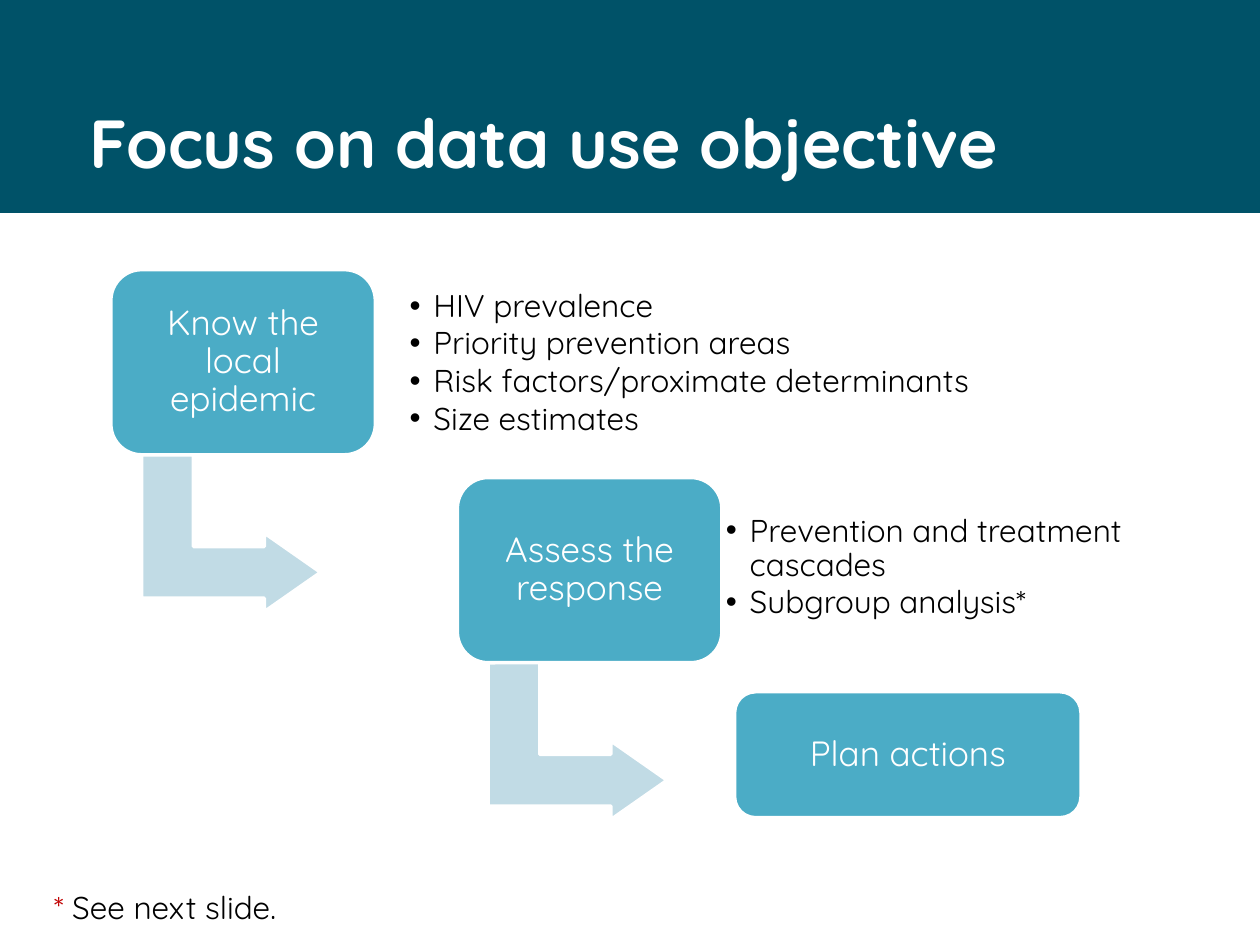
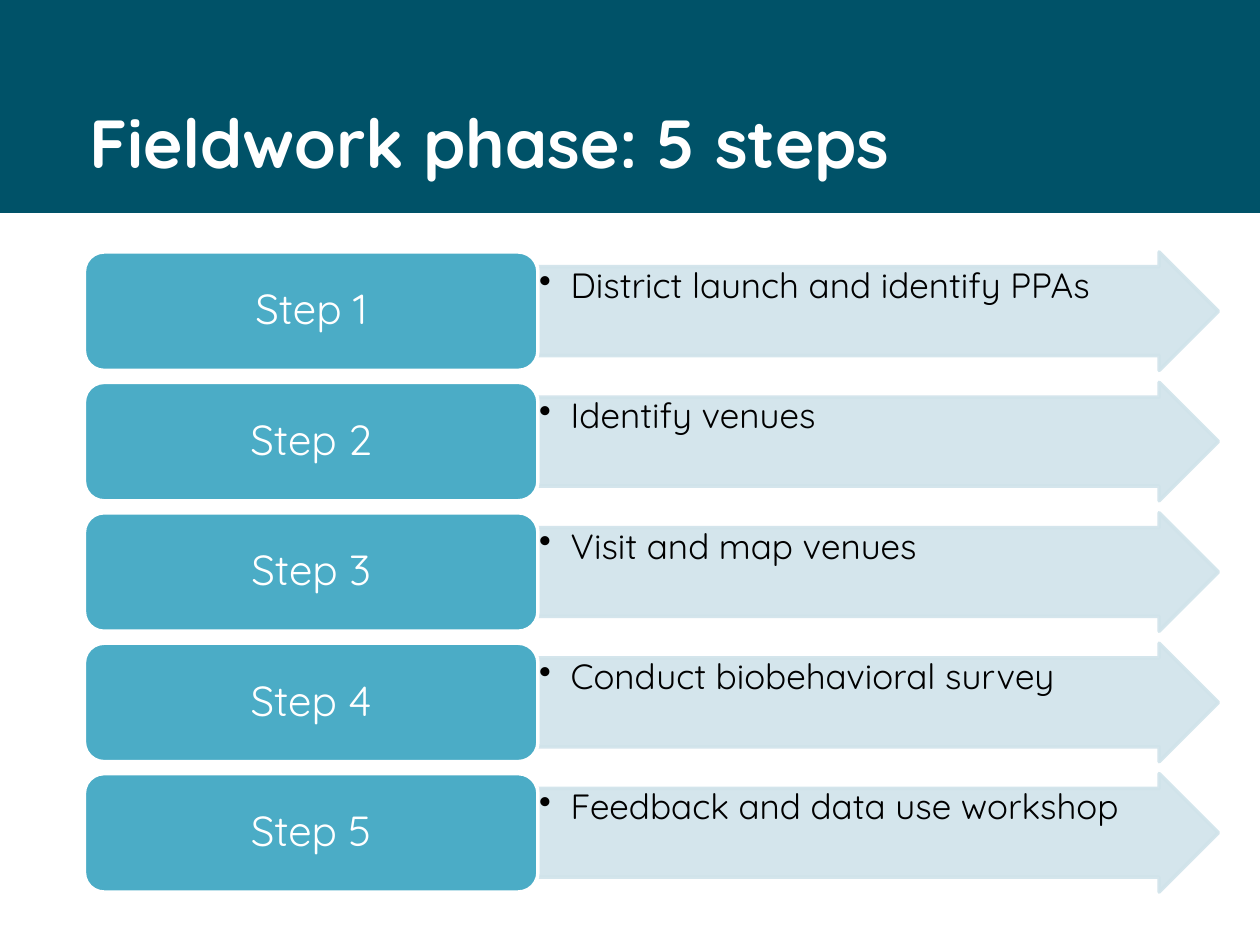
from dataclasses import dataclass

from lxml import etree
from pptx import Presentation
from pptx.dml.color import RGBColor
from pptx.enum.shapes import MSO_SHAPE
from pptx.enum.text import MSO_ANCHOR, MSO_AUTO_SIZE, PP_ALIGN
from pptx.oxml.ns import qn
from pptx.util import Inches, Pt

RECTANGLE = MSO_SHAPE.RECTANGLE
ROUNDED = MSO_SHAPE.ROUNDED_RECTANGLE
BENT_ARROW = MSO_SHAPE.BENT_UP_ARROW
RIGHT_ARROW = MSO_SHAPE.RIGHT_ARROW
TOP, MIDDLE = MSO_ANCHOR.TOP, MSO_ANCHOR.MIDDLE
LEFT, CENTER = PP_ALIGN.LEFT, PP_ALIGN.CENTER
NO_AUTOFIT = MSO_AUTO_SIZE.NONE
TITLE_ONLY, TWO_CONTENT = 5, 3


@dataclass(frozen=True)
class Theme:
    font: str = "Quicksand"
    band: str = "005268"
    box: str = "4BACC6"
    bent_arrow: str = "C1DBE5"
    step_arrow: str = "D0E3EA"
    light: str = "FFFFFF"
    dark: str = "000000"
    accent: str = "C00000"
    title_size: float = 38.8
    step_size: int = 24
    large_size: int = 20
    list_size: int = 18
    outline: int = 2


THEME = Theme()


def place(shape, box):
    shape.left, shape.top, shape.width, shape.height = map(Inches, box)


def format_runs(paragraph, size, color, bold=False):
    for run in paragraph.runs:
        run.font.name = THEME.font
        run.font.size = Pt(size)
        run.font.bold = bold
        run.font.color.rgb = RGBColor.from_string(color)


def set_frame(frame, inset, anchor):
    frame.word_wrap = True
    frame.auto_size = NO_AUTOFIT
    frame.vertical_anchor = anchor
    frame.margin_left = frame.margin_right = Inches(inset)
    frame.margin_top = frame.margin_bottom = Inches(inset)


def add_filled(slide, kind, box, fill, line=None):
    shape = slide.shapes.add_shape(kind, *map(Inches, box))
    shape.shadow.inherit = False
    shape.fill.solid()
    shape.fill.fore_color.rgb = RGBColor.from_string(fill)
    if line:
        shape.line.color.rgb = RGBColor.from_string(line)
        shape.line.width = Pt(THEME.outline)
    else:
        shape.line.fill.background()
    return shape


def add_label_box(slide, box, label, size):
    """Rounded box with a centred label."""
    shape = add_filled(slide, ROUNDED, box, THEME.box, THEME.light)
    frame = shape.text_frame
    set_frame(frame, 0.08, MIDDLE)
    frame.text = label
    paragraph = frame.paragraphs[0]
    paragraph.alignment = CENTER
    paragraph.line_spacing = 0.9
    format_runs(paragraph, size, THEME.light)


def fill_bullets(frame, items, size, indent):
    frame.text = "\n".join(items)
    for paragraph in frame.paragraphs:
        properties = paragraph._p.get_or_add_pPr()
        properties.set("marL", str(Inches(indent)))
        properties.set("indent", str(-Inches(indent)))
        etree.SubElement(properties, qn("a:buChar")).set("char", "•")
        paragraph.alignment = LEFT
        paragraph.line_spacing = 0.9
        paragraph.space_before = Pt(0)
        paragraph.space_after = Pt(2)
        format_runs(paragraph, size, THEME.dark)


def make_translucent(shape, percent):
    for color in shape._element.spPr.iter(qn("a:srgbClr")):
        etree.SubElement(color, qn("a:alpha")).set("val", str(percent * 1000))


def set_up_master(prs, slide):
    """Put the title band and the title's place on the master."""
    master = prs.slide_master
    band = add_filled(slide, RECTANGLE, (0, 0, 10, 1.69), THEME.band)
    master.shapes._spTree.insert(2, band._element)
    title = master.placeholders[0]
    place(title, (0.61, 0.75, 8.62, 1.1))
    set_frame(title.text_frame, 0.1, TOP)
    title.text_frame.margin_top = title.text_frame.margin_bottom = Inches(0.05)


def add_titled_slide(prs, layout, title):
    slide = prs.slides.add_slide(prs.slide_layouts[layout])
    frame = slide.shapes.title.text_frame
    frame.auto_size = NO_AUTOFIT
    frame.vertical_anchor = TOP
    frame.text = title
    frame.paragraphs[0].alignment = LEFT
    format_runs(frame.paragraphs[0], THEME.title_size, THEME.light, bold=True)
    return slide


def add_objective(slide, box, label, placeholder, list_box, items):
    """Objective box, the bent arrow below it and its list at the right."""
    left, top, _, _ = box
    arrow = add_filled(slide, BENT_ARROW, (left + 0.33, top + 1.38, 1.25, 1.42),
                       THEME.bent_arrow, THEME.light)
    arrow.rotation = 90
    for index, value in enumerate((0.328, 0.25, 0.358)):
        arrow.adjustments[index] = value
    add_label_box(slide, box, label, THEME.large_size)
    place(placeholder, list_box)
    set_frame(placeholder.text_frame, 0.07, MIDDLE)
    fill_bullets(placeholder.text_frame, items, THEME.list_size, 0.19)


def add_footnote(slide, box):
    frame = slide.shapes.add_textbox(*map(Inches, box)).text_frame
    frame.word_wrap = True
    paragraph = frame.paragraphs[0]
    for text in ("*", " See next slide."):
        paragraph.add_run().text = text
    format_runs(paragraph, THEME.list_size, THEME.dark)
    paragraph.runs[0].font.color.rgb = RGBColor.from_string(THEME.accent)


def fill_objectives(slide):
    first_list, second_list = list(slide.placeholders)[1:]
    add_objective(slide, (0.88, 2.14, 2.1, 1.47), "Know the local epidemic",
                  first_list, (3.18, 2.29, 6.08, 1.19),
                  ["HIV prevalence", "Priority prevention areas",
                   "Risk factors/proximate determinants", "Size estimates"])
    add_objective(slide, (3.63, 3.79, 2.1, 1.47), "Assess the response",
                  second_list, (5.69, 3.91, 3.71, 1.19),
                  ["Prevention and treatment cascades", "Subgroup analysis*"])
    add_label_box(slide, (5.83, 5.49, 2.75, 1), "Plan actions", THEME.large_size)
    add_footnote(slide, (0.33, 7, 2.67, 0.4))


def add_step(slide, box, label, activity):
    """Step box at the left of the row, with the activity in an arrow."""
    left, top, width, height = box
    box_width = 0.4 * width
    arrow = add_filled(slide, RIGHT_ARROW,
                       (left + box_width, top, width - box_width, height),
                       THEME.step_arrow, THEME.step_arrow)
    arrow.adjustments[0] = 0.75
    make_translucent(arrow, 90)
    set_frame(arrow.text_frame, 0.01, TOP)
    fill_bullets(arrow.text_frame, [activity], THEME.large_size, 0.25)
    add_label_box(slide, (left, top, box_width, height), label, THEME.step_size)


def fill_steps(slide, box, activities):
    left, top, width, height = box
    row_height = 0.94
    pitch = (height - row_height) / (len(activities) - 1)
    for index, activity in enumerate(activities):
        row = (left, top + index * pitch, width, row_height)
        add_step(slide, row, f"Step {index + 1}", activity)


def main():
    prs = Presentation()
    prs.slide_width, prs.slide_height = Inches(10), Inches(7.5)

    objectives = add_titled_slide(prs, TWO_CONTENT, "Focus on data use objective")
    set_up_master(prs, objectives)
    fill_objectives(objectives)

    steps = add_titled_slide(prs, TITLE_ONLY, "Fieldwork phase: 5 steps")
    fill_steps(steps, (0.67, 2, 9, 5.08),
               ["District launch and identify PPAs", "Identify venues",
                "Visit and map venues", "Conduct biobehavioral survey",
                "Feedback and data use workshop"])
    prs.save("out.pptx")


if __name__ == "__main__":
    main()
